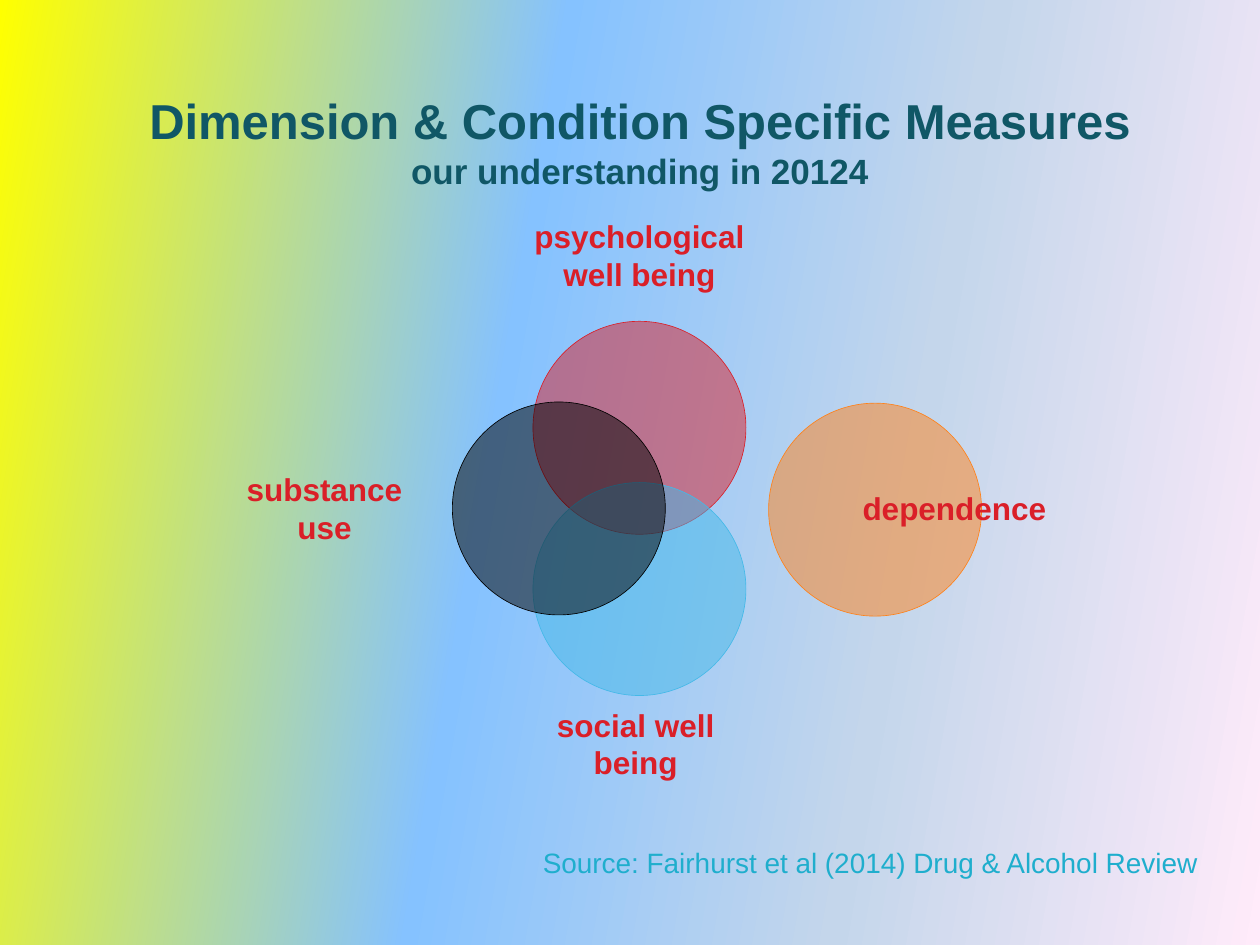
from lxml.etree import SubElement
from pptx import Presentation
from pptx.dml.color import RGBColor
from pptx.enum.shapes import MSO_SHAPE
from pptx.enum.text import MSO_ANCHOR, PP_ALIGN
from pptx.oxml.ns import qn
from pptx.util import Inches, Pt

TEAL = RGBColor(0x10, 0x57, 0x66)
RED = RGBColor(0xDA, 0x1F, 0x28)
ORANGE = RGBColor(0xFF, 0x81, 0x19)
SKY = RGBColor(0x44, 0xB9, 0xE8)
BLACK = RGBColor(0, 0, 0)
CYAN = RGBColor(0x1F, 0xAE, 0xCD)

# Content: background stops are (position %, colour, opacity %)
BACKGROUND_STOPS = [
    (0, RGBColor(0xFF, 0xFF, 0x00), 66),
    (40, RGBColor(0x85, 0xC2, 0xFF), 100),
    (70, RGBColor(0xC4, 0xD6, 0xEB), 100),
    (100, RGBColor(0xFF, 0xEB, 0xFA), 100),
]
BACKGROUND_ANGLE = 10
TITLE = "Dimension & Condition Specific Measures"
SUBTITLE = "our understanding in 20124"
SOURCE = "Source: Fairhurst et al (2014) Drug & Alcohol Review"

# Each measure: label, label (left, top), circle colour, circle (left, top)
DIAMETER, LABEL_HEIGHT = 1.69, 0.42
MIDDLE_LEFT, SIDE_LABEL_TOP = 4.23, 3.82
MEASURES = [
    ("psychological well being", (MIDDLE_LEFT, 1.81), RED, (MIDDLE_LEFT, 2.55)),
    ("dependence", (6.73, SIDE_LABEL_TOP), ORANGE, (6.1, 3.2)),
    ("social well being", (4.2, 5.69), SKY, (MIDDLE_LEFT, 3.83)),
    ("substance use", (1.73, SIDE_LABEL_TOP), BLACK, (3.59, 3.19)),
]


def set_alpha(color_element, percent):
    SubElement(color_element, qn("a:alpha")).set("val", str(percent * 1000))


def paint_background(slide):
    fill = slide.background.fill
    fill.gradient()
    fill.gradient_angle = 0
    properties = slide.background._cSld.bg.bgPr
    properties.find(".//" + qn("a:lin")).set("ang", str(BACKGROUND_ANGLE * 60000))
    stop_list = properties.find(".//" + qn("a:gsLst"))
    for stop in list(stop_list):
        stop_list.remove(stop)
    for position, color, opacity in BACKGROUND_STOPS:
        stop = SubElement(stop_list, qn("a:gs"), pos=str(position * 1000))
        color_element = SubElement(stop, qn("a:srgbClr"), val=str(color))
        if opacity < 100:
            set_alpha(color_element, opacity)


def add_text(slide, box, lines, color, bold=True, align=PP_ALIGN.CENTER,
             wrap=False, margin=None):
    """Add one paragraph; lines holds a (text, size) pair for each line."""
    shape = slide.shapes.add_textbox(*(Inches(length) for length in box))
    frame = shape.text_frame
    frame.word_wrap = wrap
    frame.vertical_anchor = MSO_ANCHOR.MIDDLE
    if margin is not None:
        frame.margin_left = frame.margin_right = Inches(margin)
        frame.margin_top = frame.margin_bottom = Inches(margin)
    paragraph = frame.paragraphs[0]
    paragraph.text = "\v".join(text for text, size in lines)
    paragraph.alignment = align
    for run, (text, size) in zip(paragraph.runs, lines):
        run.font.name = "Arial"
        run.font.size = Pt(size)
        run.font.bold = bold
        run.font.color.rgb = color


def add_circle(slide, position, color):
    left, top = (Inches(length) for length in position)
    circle = slide.shapes.add_shape(
        MSO_SHAPE.OVAL, left, top, Inches(DIAMETER), Inches(DIAMETER))
    circle.shadow.inherit = False
    circle.fill.solid()
    circle.fill.fore_color.rgb = color
    fill_element = circle._element.spPr.find(qn("a:solidFill"))
    set_alpha(fill_element.find(qn("a:srgbClr")), 50)
    circle.line.color.rgb = color
    circle.line.width = Pt(0.37)


def main():
    presentation = Presentation()
    presentation.slide_width, presentation.slide_height = Inches(10), Inches(7.5)
    slide = presentation.slides.add_slide(presentation.slide_layouts[6])
    paint_background(slide)

    # Title
    add_text(slide, (0.83, 0.68, 8.5, 0.88), [(TITLE, 28), (SUBTITLE, 20)],
             TEAL, wrap=True)

    # Overlapping circles with their labels
    for label, label_position, color, circle_position in MEASURES:
        add_circle(slide, circle_position, color)
        add_text(slide, (*label_position, DIAMETER, LABEL_HEIGHT),
                 [(label, 18)], RED, margin=0)

    # Source
    add_text(slide, (4.21, 6.66, 5.47, 0.37), [(SOURCE, 16)], CYAN,
             bold=False, align=PP_ALIGN.LEFT)

    presentation.save("out.pptx")


if __name__ == "__main__":
    main()
